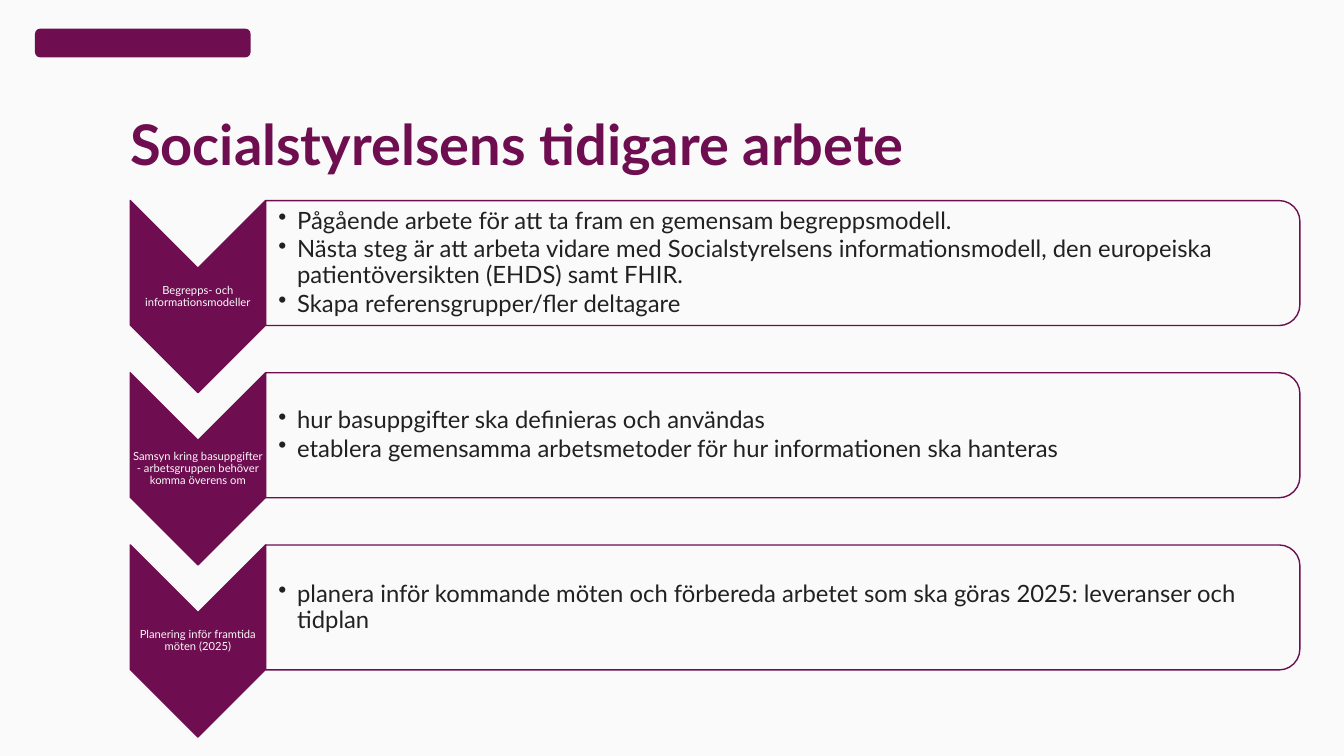
from lxml.etree import SubElement
from pptx import Presentation
from pptx.dml.color import RGBColor
from pptx.enum.shapes import MSO_SHAPE
from pptx.enum.text import MSO_ANCHOR, PP_ALIGN
from pptx.oxml.ns import qn
from pptx.util import Pt

PX = 9525  # EMU per px, 96 px to the inch
PLUM = RGBColor(0x6E, 0x0E, 0x50)
PAPER = RGBColor(0xFA, 0xFA, 0xFA)
INK = RGBColor(0x21, 0x21, 0x21)
FONT = "Lato"

# Row geometry in px
LEFT, TOP, PITCH = 124, 191, 164
CHEVRON_W, CHEVRON_H = 129, 183
BAR_W, BAR_H = 985, 119
BULLET_INDENT = 18

ROWS = [
    ("Begrepps- och informationsmodeller", [
        "Pågående arbete för att ta fram en gemensam begreppsmodell.",
        "Nästa steg är att arbeta vidare med Socialstyrelsens informationsmodell, "
        "den europeiska patientöversikten (EHDS) samt FHIR.",
        "Skapa referensgrupper/fler deltagare",
    ]),
    ("Samsyn kring basuppgifter - arbetsgruppen behöver komma överens om", [
        "hur basuppgifter ska definieras och användas",
        "etablera gemensamma arbetsmetoder för hur informationen ska hanteras",
    ]),
    ("Planering inför framtida möten (2025)", [
        "planera inför kommande möten och förbereda arbetet som ska göras 2025: "
        "leveranser och tidplan",
    ]),
]


def add_shape(s, kind, x, y, w, h, fill):
    sp = s.shapes.add_shape(kind, x * PX, y * PX, w * PX, h * PX)
    sp.shadow.inherit = False
    sp.fill.solid()
    sp.fill.fore_color.rgb = fill
    sp.line.color.rgb = PLUM
    sp.line.width = Pt(1)
    return sp


def add_turned(s, kind, x, y, w, h, fill):
    """Add a shape turned 90 degrees that covers the box x, y, w, h."""
    sp = add_shape(s, kind, x, y, h, w, fill)
    sp.left = x * PX + (w - h) * PX // 2
    sp.top = y * PX + (h - w) * PX // 2
    sp.rotation = 90
    return sp


def set_alpha(sp, percent):
    color = sp.fill._xPr.find(qn("a:solidFill"))[0]
    SubElement(color, qn("a:alpha"), val=str(percent * 1000))


def add_text(s, x, y, w, h, lines, size, color, inset=0, bold=False):
    tf = s.shapes.add_textbox(x * PX, y * PX, w * PX, h * PX).text_frame
    tf.word_wrap = True
    tf.margin_left = tf.margin_right = inset * PX
    tf.margin_top = tf.margin_bottom = inset * PX
    tf.text = "\n".join(lines)
    for p in tf.paragraphs:
        p.line_spacing = 0.9
        for r in p.runs:
            r.font.name = FONT
            r.font.size = Pt(size)
            r.font.bold = bold
            r.font.color.rgb = color
    return tf


def add_bullet(p):
    pPr = p._p.get_or_add_pPr()
    pPr.set("marL", str(BULLET_INDENT * PX))
    pPr.set("indent", str(-BULLET_INDENT * PX))
    SubElement(pPr, qn("a:buChar"), char="•")


def add_row(s, y, label, points):
    # Chevron with its label
    add_turned(s, MSO_SHAPE.CHEVRON, LEFT, y, CHEVRON_W, CHEVRON_H, PLUM)
    tf = add_text(s, LEFT, y + 64, CHEVRON_W, 55, [label], 8, PAPER, inset=1)
    tf.vertical_anchor = MSO_ANCHOR.MIDDLE
    tf.paragraphs[0].alignment = PP_ALIGN.CENTER

    # Bar with its bullet points
    x = LEFT + CHEVRON_W
    bar = add_turned(s, MSO_SHAPE.ROUND_2_SAME_RECTANGLE, x, y, BAR_W, BAR_H, PAPER)
    set_alpha(bar, 90)
    tf = add_text(s, x, y + 6, BAR_W - 6, BAR_H - 12, points, 17, INK, inset=1)
    tf.margin_left = 12 * PX
    tf.vertical_anchor = MSO_ANCHOR.MIDDLE
    for p in tf.paragraphs:
        p.space_after = Pt(2)
        add_bullet(p)


def main():
    prs = Presentation()
    prs.slide_width, prs.slide_height = 1280 * PX, 720 * PX
    s = prs.slides.add_slide(prs.slide_layouts[6])
    s.background.fill.solid()
    s.background.fill.fore_color.rgb = PAPER

    # Sender mark
    add_shape(s, MSO_SHAPE.ROUNDED_RECTANGLE, 34, 28, 204, 26, PLUM)

    # Title
    add_text(s, LEFT, 112, 845, 59, ["Socialstyrelsens tidigare arbete"],
             40, PLUM, bold=True)

    # Steps
    for i, (label, points) in enumerate(ROWS):
        add_row(s, TOP + i * PITCH, label, points)

    prs.save("out.pptx")


if __name__ == "__main__":
    main()
